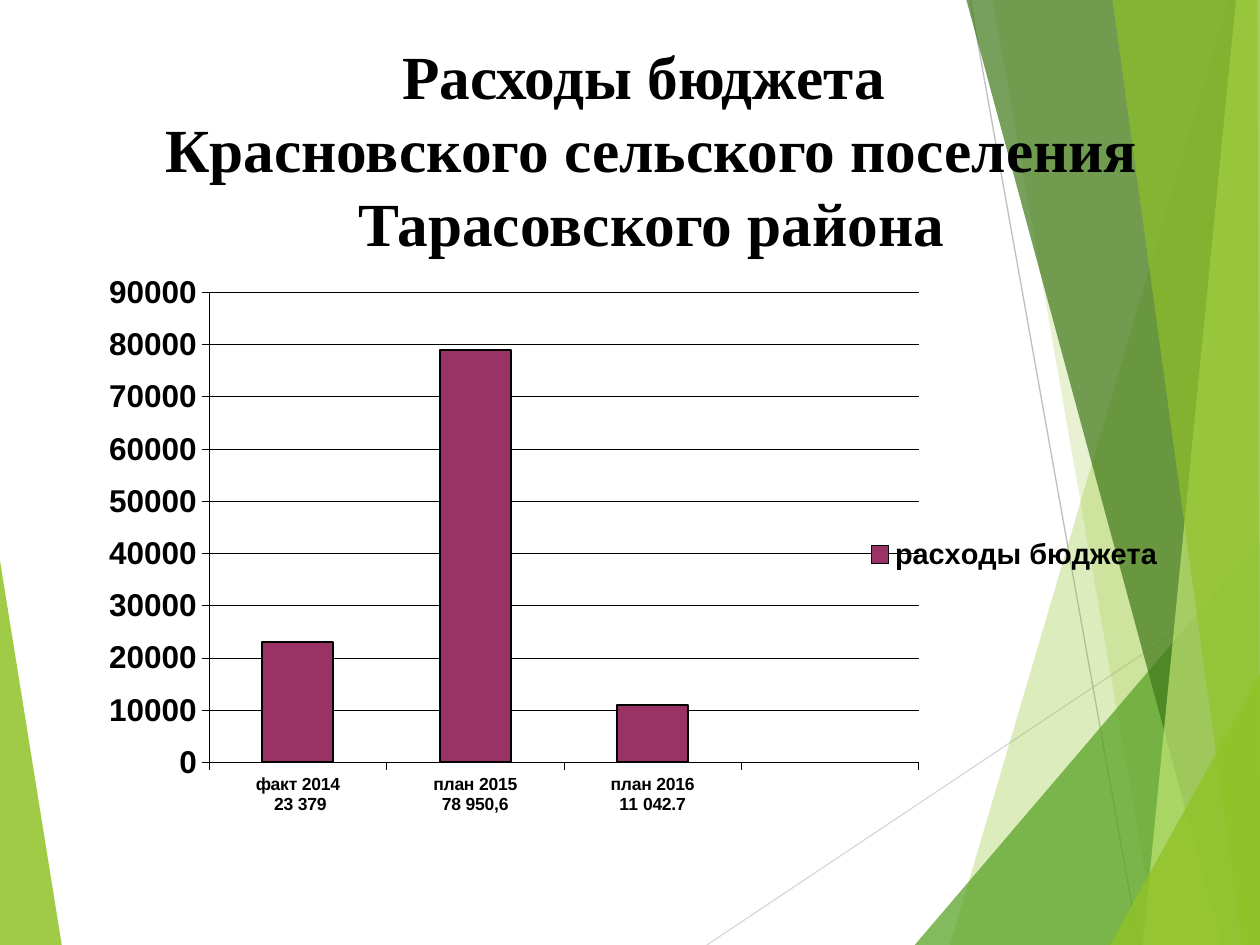
from lxml import etree
from pptx import Presentation
from pptx.chart.data import CategoryChartData
from pptx.dml.color import RGBColor
from pptx.enum.chart import XL_CHART_TYPE, XL_LEGEND_POSITION, XL_TICK_LABEL_POSITION, XL_TICK_MARK
from pptx.enum.shapes import MSO_CONNECTOR
from pptx.enum.text import MSO_ANCHOR, MSO_AUTO_SIZE, PP_ALIGN
from pptx.oxml import parse_xml
from pptx.oxml.ns import nsdecls, qn
from pptx.util import Inches, Pt

COLUMNS = XL_CHART_TYPE.COLUMN_CLUSTERED
LEGEND_RIGHT = XL_LEGEND_POSITION.RIGHT
LABELS_LOW = XL_TICK_LABEL_POSITION.LOW
TICK_OUT = XL_TICK_MARK.OUTSIDE
STRAIGHT = MSO_CONNECTOR.STRAIGHT

TITLE = ["Расходы бюджета ", "Красновского сельского поселения Тарасовского района"]
SERIES = "расходы бюджета"
BUDGET = [
    ("факт 2014\n 23 379", 23000),
    ("план 2015\n78 950,6", 79000),
    ("план 2016\n11 042.7", 11000),
    ("", None),
]

# left, top, width, height in inches; plot and legend start from the chart's corner
CHART_AREA = (0.59, 2.15, 8.87, 4.84)
PLOT_AREA = (1.07, 0.17, 5.63, 3.73)
LEGEND_AREA = (6.05, 2.08, 2.93, 0.34)

BLACK = "000000"
LEAF = "90C226"
# colour, opacity in percent, corner points in inches
LEFT_FACET = (LEAF, 85, [(0, 4.45), (0.49, 7.5), (0, 7.5)])
RAYS = [  # colour, start, end
    ("D9D9D9", (5.61, 7.5), (10, 4.57)),
    ("BFBFBF", (7.7, 0), (9.04, 7.5)),
]
RIGHT_FACETS = [
    (LEAF, 30, [(9.75, 0), (7.54, 7.5), (10, 7.5), (10, 0)]),
    (LEAF, 20, [(7.88, 0), (9.19, 7.5), (10, 7.5), (10, 0)]),
    ("54A021", 72, [(7.26, 7.5), (10, 4.29), (10, 7.5)]),
    ("3F7819", 70, [(7.67, 0), (9.7, 7.5), (10, 7.5), (10, 0)]),
    ("C0E474", 70, [(9.81, 0), (9.07, 7.5), (10, 7.5), (10, 0)]),
    (LEAF, 65, [(8.83, 0), (9.86, 7.5), (10, 7.5), (9.98, 0)]),
    (LEAF, 80, [(8.81, 7.5), (10, 5.35), (10, 7.5)]),
]


def color(hex_code):
    return RGBColor.from_string(hex_code)


def set_font(font, size, name="Arial"):
    for key, value in {"size": Pt(size), "name": name, "bold": True}.items():
        setattr(font, key, value)
    font.color.rgb = color(BLACK)


def set_line(line, hex_code, width):
    line.color.rgb = color(hex_code)
    line.width = Pt(width)


def add_facet(page, hex_code, opacity, points):
    corners = [(Inches(x), Inches(y)) for x, y in points]
    builder = page.shapes.build_freeform(*corners[0])
    builder.add_line_segments(corners[1:], close=True)
    facet = builder.convert_to_shape()
    facet.shadow.inherit = False
    facet.line.fill.background()
    facet.fill.solid()
    facet.fill.fore_color.rgb = color(hex_code)
    fill_color = facet.fill._xPr.find(qn("a:solidFill"))[0]
    etree.SubElement(fill_color, qn("a:alpha")).set("val", str(opacity * 1000))


def add_ray(page, hex_code, start, end):
    ray = page.shapes.add_connector(STRAIGHT, *(Inches(v) for v in start + end))
    set_line(ray.line, hex_code, 0.75)
    etree.SubElement(ray._element.spPr, qn("a:effectLst"))


def manual_layout(area, inner=False):
    """Chart layout element; inches become shares of the chart area."""
    target = '<c:layoutTarget val="inner"/>' if inner else ""
    modes = '<c:xMode val="edge"/><c:yMode val="edge"/>'
    totals = CHART_AREA[2:] * 2
    sizes = "".join(f'<c:{key} val="{length / total}"/>'
                    for key, length, total in zip("xywh", area, totals))
    return parse_xml(f'<c:layout {nsdecls("c")}><c:manualLayout>{target}{modes}{sizes}'
                     "</c:manualLayout></c:layout>")


def add_budget_chart(page):
    data = CategoryChartData()
    data.categories = [label for label, _ in BUDGET]
    data.add_series(SERIES, [value for _, value in BUDGET])
    frame = page.shapes.add_chart(COLUMNS, *(Inches(v) for v in CHART_AREA), data)
    chart = frame.chart
    chart.has_title = False
    set_font(chart.font, 18)

    plot = chart.plots[0]
    plot.gap_width = 150
    plot.vary_by_categories = False
    columns = plot.series[0].format
    columns.fill.solid()
    columns.fill.fore_color.rgb = color("993366")
    set_line(columns.line, BLACK, 1)

    for axis, size in ((chart.category_axis, 10), (chart.value_axis, 18)):
        axis.major_tick_mark = TICK_OUT
        set_font(axis.tick_labels.font, size)
        set_line(axis.format.line, BLACK, 0.25)
    chart.category_axis.tick_label_position = LABELS_LOW
    scale = chart.value_axis
    scale.minimum_scale, scale.maximum_scale, scale.major_unit = 0, 90000, 10000
    scale.tick_labels.number_format = "0"
    scale.tick_labels.number_format_is_linked = False
    set_line(scale.major_gridlines.format.line, BLACK, 0.25)

    chart.has_legend = True
    legend = chart.legend
    legend.position = LEGEND_RIGHT
    legend.include_in_layout = False
    set_font(legend.font, 16.5)
    legend._element.find(qn("c:legendPos")).addnext(manual_layout(LEGEND_AREA))

    area = plot._element.getparent()
    for old in area.findall(qn("c:layout")):
        area.remove(old)
    area.insert(0, manual_layout(PLOT_AREA, inner=True))


def place_title(page):
    title = page.shapes.title
    place = {"left": 0.67, "top": 0.25, "width": 9, "height": 1.25}
    for key, value in place.items():
        setattr(title, key, Inches(value))
    page.shapes._spTree.append(title._element)  # in front of the facets
    frame = title.text_frame
    frame.word_wrap = True
    frame.auto_size = MSO_AUTO_SIZE.NONE
    frame.vertical_anchor = MSO_ANCHOR.TOP
    for i, line in enumerate(TITLE):
        para = frame.paragraphs[0] if i == 0 else frame.add_paragraph()
        para.alignment = PP_ALIGN.CENTER
        para.line_spacing = 1.0
        para.space_before = Pt(0)
        span = para.add_run()
        span.text = line
        set_font(span.font, 35, "Times New Roman")


def main():
    deck = Presentation()
    deck.slide_width, deck.slide_height = Inches(10), Inches(7.5)
    page = deck.slides.add_slide(deck.slide_layouts[5])
    add_facet(page, *LEFT_FACET)
    for ray in RAYS:
        add_ray(page, *ray)
    for facet in RIGHT_FACETS:
        add_facet(page, *facet)
    add_budget_chart(page)
    place_title(page)
    deck.save("out.pptx")


if __name__ == "__main__":
    main()
